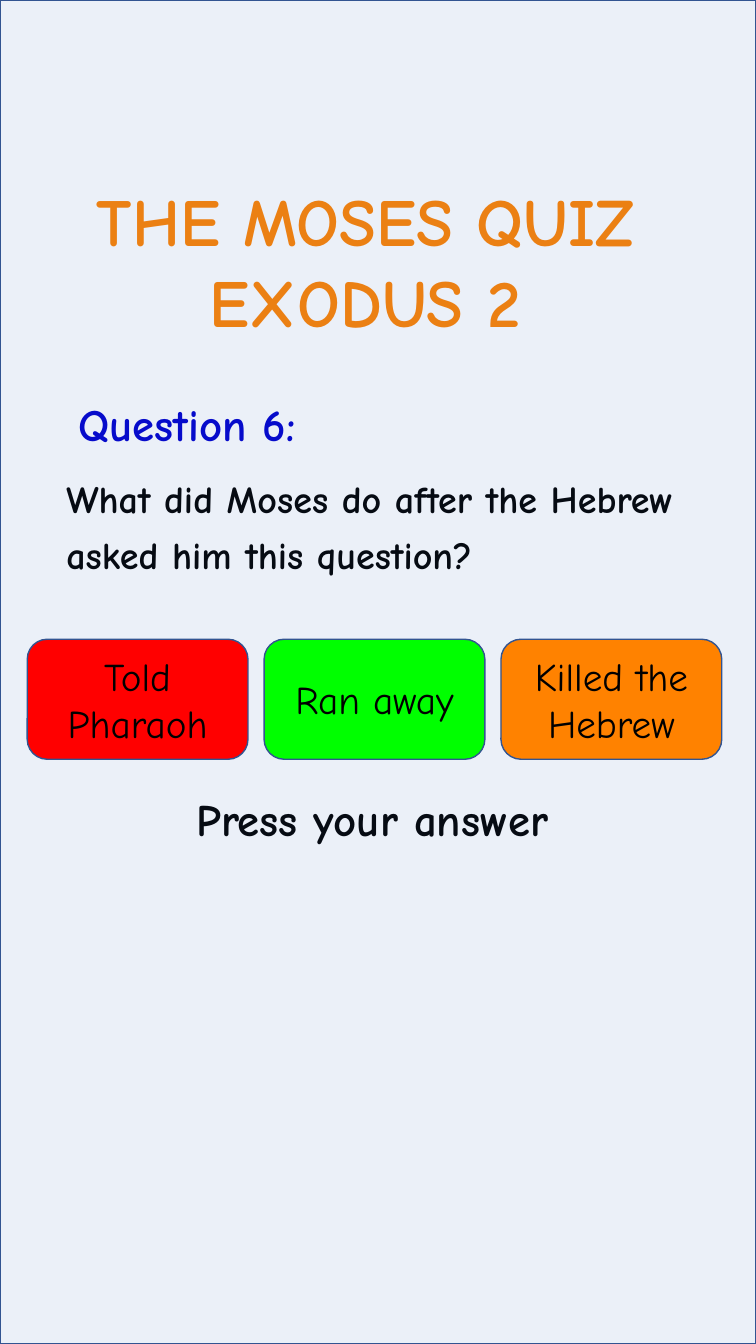
"""Build a portrait quiz slide with a question and three answer buttons."""
from lxml import etree
from pptx import Presentation
from pptx.dml.color import RGBColor
from pptx.enum.shapes import MSO_SHAPE
from pptx.enum.text import MSO_ANCHOR, MSO_AUTO_SIZE, PP_ALIGN
from pptx.oxml.ns import qn
from pptx.util import Inches, Pt

RECT, ROUNDED = MSO_SHAPE.RECTANGLE, MSO_SHAPE.ROUNDED_RECTANGLE
TOP, MIDDLE = MSO_ANCHOR.TOP, MSO_ANCHOR.MIDDLE
LEFT, CENTER = PP_ALIGN.LEFT, PP_ALIGN.CENTER
NO_FIT = MSO_AUTO_SIZE.NONE

FONT = "Comic Neue"
COLORS = {"orange": "FF8200", "blue": "0000CC", "black": "000000", "red": "FF0000",
          "green": "00FF00", "wash": "4472C4", "edge": "325491"}
WIDTH, HEIGHT = 7.5, 13.33
WASH_OPACITY = 10

TITLE = ["THE MOSES QUIZ ", "EXODUS 2 "]
TITLE_BOX = (0.3, 1.73, 6.89, 1.72)
PROMPTS = [
    {"text": "Question 6:", "box": (0.47, 3.89, 2.77, 0.64), "size": 32,
     "color": "blue", "align": CENTER, "wrap": False},
    {"text": "What did Moses do after the Hebrew asked him this question?",
     "box": (0.56, 4.56, 6.36, 1.46), "size": 27.2, "spacing": Pt(40), "before": 7.5},
    {"text": "Press your answer", "box": (1.85, 7.86, 4.22, 0.72), "size": 32,
     "spacing": 0.9, "before": 7.5},
]
ANSWERS = [("Told Pharaoh", "red"), ("Ran away", "green"), ("Killed the Hebrew", "orange")]
ANSWER_LEFT, ANSWER_TOP, ANSWER_PITCH = 0.27, 6.34, 2.35
ANSWER_WIDTH, ANSWER_HEIGHT = 2.19, 1.19


def rgb(name):
    return RGBColor.from_string(COLORS[name])


def write(frame, lines, size, color="black", bold=True, align=LEFT, spacing=1.0,
          before=0, wrap=True, anchor=TOP):
    frame.text = "\n".join(lines)
    frame.auto_size, frame.word_wrap = NO_FIT, wrap
    frame.vertical_anchor = anchor
    for paragraph in frame.paragraphs:
        paragraph.alignment = align
        paragraph.line_spacing, paragraph.space_before = spacing, Pt(before)
        font = paragraph.font
        font.name, font.size, font.bold = FONT, Pt(size), bold
        font.color.rgb = rgb(color)


def add_panel(slide, kind, box, fill):
    panel = slide.shapes.add_shape(kind, *map(Inches, box))
    panel.shadow.inherit = False
    panel.fill.solid()
    panel.fill.fore_color.rgb = rgb(fill)
    panel.line.color.rgb = rgb("edge")
    panel.line.width = Pt(1)
    return panel


def main():
    deck = Presentation()
    deck.slide_width, deck.slide_height = Inches(WIDTH), Inches(HEIGHT)
    slide = deck.slides.add_slide(deck.slide_layouts[5])

    title = slide.shapes.title
    title.left, title.top, title.width, title.height = map(Inches, TITLE_BOX)
    write(title.text_frame, TITLE, 48, "orange", align=CENTER, wrap=False)

    for prompt in PROMPTS:
        style = {key: value for key, value in prompt.items() if key not in ("text", "box")}
        prompt_box = slide.shapes.add_textbox(*map(Inches, prompt["box"]))
        write(prompt_box.text_frame, [prompt["text"]], **style)

    wash = add_panel(slide, RECT, (0, 0, WIDTH, HEIGHT), "wash")
    wash_color = wash.fill._xPr.find(qn("a:solidFill"))[0]
    etree.SubElement(wash_color, qn("a:alpha"), val=str(WASH_OPACITY * 1000))

    for column, (answer, fill) in enumerate(ANSWERS):
        left = ANSWER_LEFT + column * ANSWER_PITCH
        button = add_panel(slide, ROUNDED, (left, ANSWER_TOP, ANSWER_WIDTH, ANSWER_HEIGHT), fill)
        write(button.text_frame, [answer], 28, bold=False, align=CENTER, anchor=MIDDLE)

    deck.save("out.pptx")


if __name__ == "__main__":
    main()
